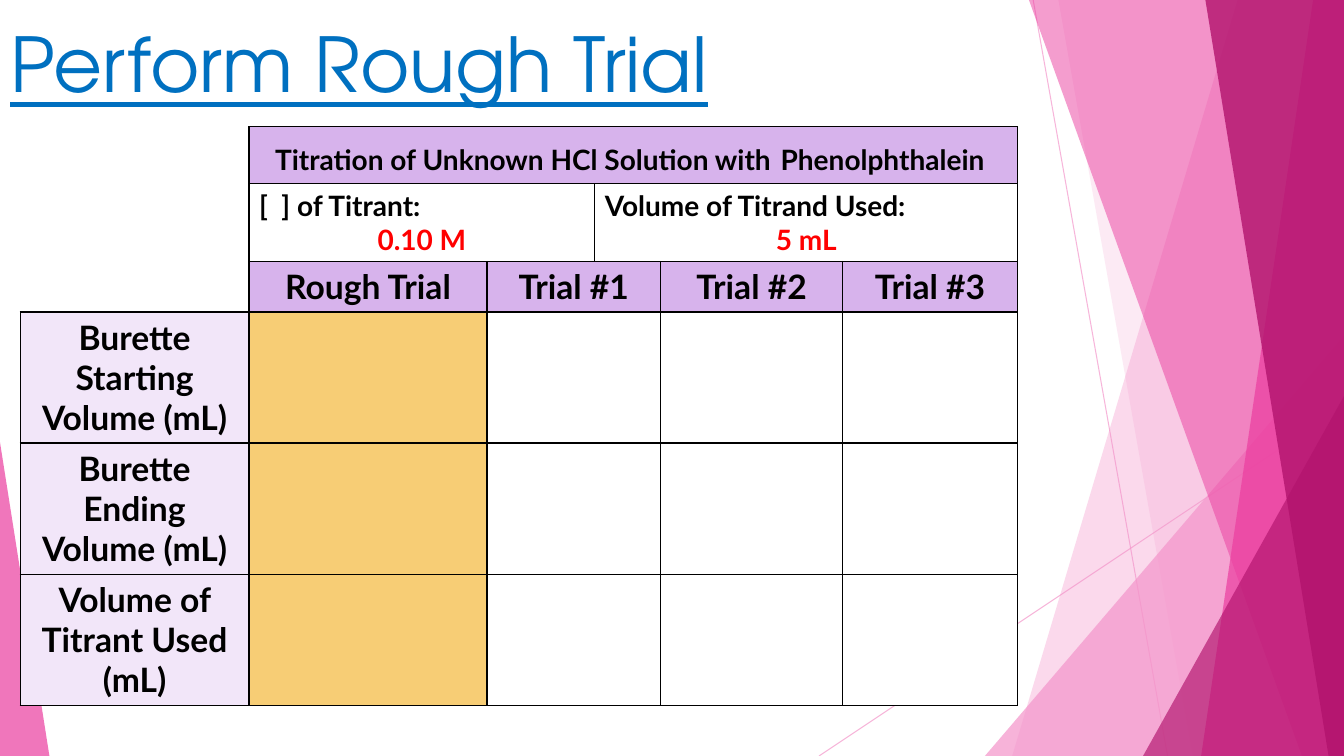
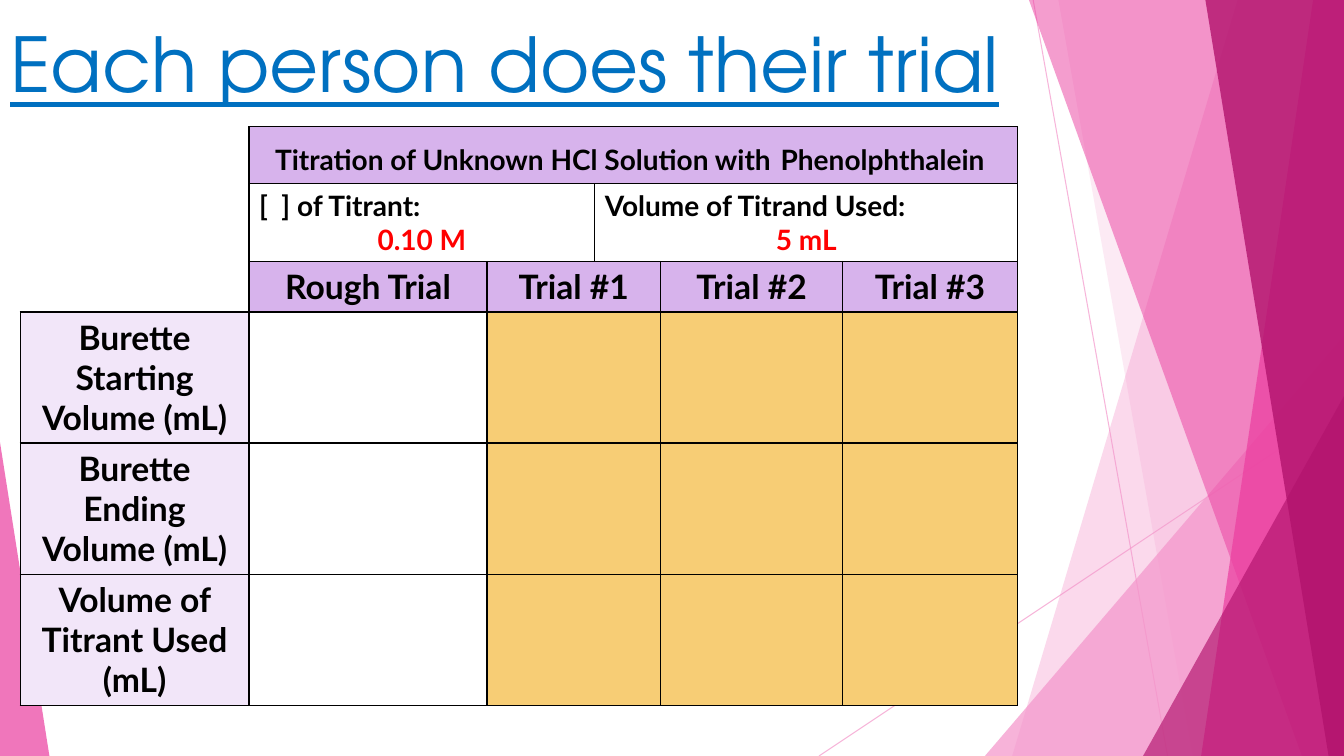
from lxml.etree import SubElement
from pptx import Presentation
from pptx.dml.color import RGBColor
from pptx.enum.shapes import MSO_CONNECTOR, MSO_SHAPE, PP_PLACEHOLDER
from pptx.enum.text import MSO_ANCHOR, MSO_AUTO_SIZE, PP_ALIGN
from pptx.oxml.ns import qn
from pptx.util import Pt

WIDTH, HEIGHT = 960, 540
COLOURS = {
    "title": "0070C0", "text": "000000", "value": "FF0000", "border": "000000",
    "white": "FFFFFF", "header": "D7B3EC", "label": "F2E6F9", "active": "F7CD75",
    "light pink": "F496CB", "pink": "EB3D9F", "dark pink": "B2136D",
}
TITLE_FONT = {"name": "TeX Gyre Adventor", "size": Pt(54), "underline": True}
TABLE_FONT = {"name": "Lato", "bold": True}
TITLE_BOX = {"left": Pt(0), "top": Pt(8.6), "width": Pt(742), "height": Pt(163)}

COLUMN_WIDTHS = [163.5, 170, 77, 47, 130, 125]
ROW_HEIGHTS = [40.8, 55.2, 36] + [93.6] * 3
TRIAL_COLUMNS = {"Rough Trial": (1, 1), "Trial #1": (2, 3), "Trial #2": (4, 4), "Trial #3": (5, 5)}
MEASUREMENTS = ["Burette Starting Volume (mL)", "Burette Ending Volume (mL)", "Volume of Titrant Used (mL)"]
CONDITIONS = [("[  ] of Titrant:", "0.10 M", 1, 2), ("Volume of Titrand Used:", "5 mL", 3, 5)]
HEADING = [("Titration of Unknown HCl Solution with", 20), (" ", 28), ("Phenolphthalein ", 20)]
NO_STYLE = "{2D5ABB26-0587-4C30-8999-92F81FD0307C}"
SLIDES = [
    ("Perform Rough Trial", ["Rough Trial"]),
    ("Each person does their trial", ["Trial #1", "Trial #2", "Trial #3"]),
]


def set_all(target, values):
    for name, value in values.items():
        setattr(target, name, value)


def colour(name):
    return RGBColor.from_string(COLOURS[name])


def set_opacity(parent, percent):
    for element in parent.iter(qn("a:srgbClr")):
        SubElement(element, qn("a:alpha"), val=str(percent * 1000))


def paint(shape, fill, opacity):
    shape.shadow.inherit = False
    shape.fill.solid()
    shape.fill.fore_color.rgb = colour(fill)
    shape.line.fill.background()
    set_opacity(shape.element.spPr, opacity)


def add_ray(page, start, end):
    ray = page.shapes.add_connector(MSO_CONNECTOR.STRAIGHT, *map(Pt, start + end))
    ray.line.color.rgb = colour("light pink")
    ray.line.width = Pt(0.75)
    set_opacity(ray.element.spPr, 70)
    SubElement(ray.element.spPr, qn("a:effectLst"))


def add_band(page, top_x, bottom_x, fill, opacity):
    builder = page.shapes.build_freeform(top_x, 0, scale=Pt(1))
    builder.add_line_segments([(WIDTH, 0), (WIDTH, HEIGHT), (bottom_x, HEIGHT)], close=True)
    paint(builder.convert_to_shape(), fill, opacity)


def add_wedge(page, left, top, width, apex, fill, opacity):
    box = map(Pt, (left, top, width, HEIGHT - top))
    wedge = page.shapes.add_shape(MSO_SHAPE.ISOSCELES_TRIANGLE, *box)
    wedge.adjustments[0] = apex
    paint(wedge, fill, opacity)


def add_backdrop(page):
    add_ray(page, (738, 0), (834, HEIGHT))
    add_ray(page, (WIDTH, 290), (585, HEIGHT))
    add_band(page, 884, 723, "light pink", 36)
    add_band(page, 756, 852, "light pink", 20)
    add_wedge(page, 703.5, 240, 256.5, 1, "light pink", 72)
    add_band(page, 735, 929.5, "pink", 50)
    add_band(page, 938, 858, "pink", 70)
    add_band(page, 861, 949, "dark pink", 80)
    add_wedge(page, 816.5, 283, 143.5, 1, "dark pink", 66)
    add_wedge(page, 0, 316, 35.3, 0, "pink", 70)


def move_to_layout(page, layout):
    drawings = [shape for shape in page.shapes if not shape.is_placeholder]
    for index, shape in enumerate(drawings, start=2):
        layout.shapes.element.insert(index, shape.element)


def prepare_layout(layout):
    for holder in list(layout.placeholders):
        if holder.placeholder_format.type == PP_PLACEHOLDER.TITLE:
            set_all(holder, TITLE_BOX)
        else:
            holder.element.getparent().remove(holder.element)


def add_span(para, text, font, colour_name):
    span = para.add_run()
    span.text = text
    set_all(span.font, font)
    span.font.color.rgb = colour(colour_name)


def write_title(page, text):
    frame = page.shapes.title.text_frame
    set_all(frame, {"vertical_anchor": MSO_ANCHOR.TOP, "auto_size": MSO_AUTO_SIZE.NONE, "word_wrap": True})
    para = frame.paragraphs[0]
    para.alignment = PP_ALIGN.LEFT
    add_span(para, text, TITLE_FONT, "title")


def write_cell(para, text, size=24, colour_name="text", align=PP_ALIGN.CENTER):
    para.alignment = align
    add_span(para, text, {**TABLE_FONT, "size": Pt(size)}, colour_name)


def set_borders(cell, sides):
    properties = cell._tc.get_or_add_tcPr()
    for index, side in enumerate(sides):
        line = SubElement(properties, qn("a:ln" + side), w=str(Pt(1)))
        fill = SubElement(line, qn("a:solidFill"))
        SubElement(fill, qn("a:srgbClr"), val=COLOURS["border"])
        properties.insert(index, line)


def add_cell(table, rows, columns, fill, sides="LRTB"):
    cell = table.cell(rows[0], columns[0])
    if (rows[0], columns[0]) != (rows[1], columns[1]):
        cell.merge(table.cell(rows[1], columns[1]))
    cell.fill.solid()
    cell.fill.fore_color.rgb = colour(fill)
    set_borders(cell, sides)
    return cell.text_frame


def add_results_table(page, active_trials):
    frame = page.shapes.add_table(
        len(ROW_HEIGHTS), len(COLUMN_WIDTHS), Pt(14.4), Pt(90.5), Pt(sum(COLUMN_WIDTHS)), Pt(sum(ROW_HEIGHTS))
    )
    next(frame.element.iter(qn("a:tableStyleId"))).text = NO_STYLE
    table = frame.table
    for column, width in zip(table.columns, COLUMN_WIDTHS):
        column.width = Pt(width)
    for row, height in zip(table.rows, ROW_HEIGHTS):
        row.height = Pt(height)

    add_cell(table, (0, 2), (0, 0), "white", "RB")
    heading = add_cell(table, (0, 0), (1, 5), "header").paragraphs[0]
    for text, size in HEADING:
        write_cell(heading, text, size)
    for label, value, first, last in CONDITIONS:
        box = add_cell(table, (1, 1), (first, last), "white")
        write_cell(box.paragraphs[0], label, 20, align=PP_ALIGN.LEFT)
        write_cell(box.add_paragraph(), value, 20, "value")
    for trial, columns in TRIAL_COLUMNS.items():
        write_cell(add_cell(table, (2, 2), columns, "header").paragraphs[0], trial)
    for row, label in enumerate(MEASUREMENTS, start=3):
        write_cell(add_cell(table, (row, row), (0, 0), "label").paragraphs[0], label)
        for trial, columns in TRIAL_COLUMNS.items():
            add_cell(table, (row, row), columns, "active" if trial in active_trials else "white")


def main():
    deck = Presentation()
    set_all(deck, {"slide_width": Pt(WIDTH), "slide_height": Pt(HEIGHT)})
    layout = deck.slide_layouts.get_by_name("Title Only")
    prepare_layout(layout)
    pages = [deck.slides.add_slide(layout) for _ in SLIDES]
    add_backdrop(pages[0])
    move_to_layout(pages[0], layout)
    for page, (title, active_trials) in zip(pages, SLIDES):
        write_title(page, title)
        add_results_table(page, active_trials)
    deck.save("out.pptx")


if __name__ == "__main__":
    main()
